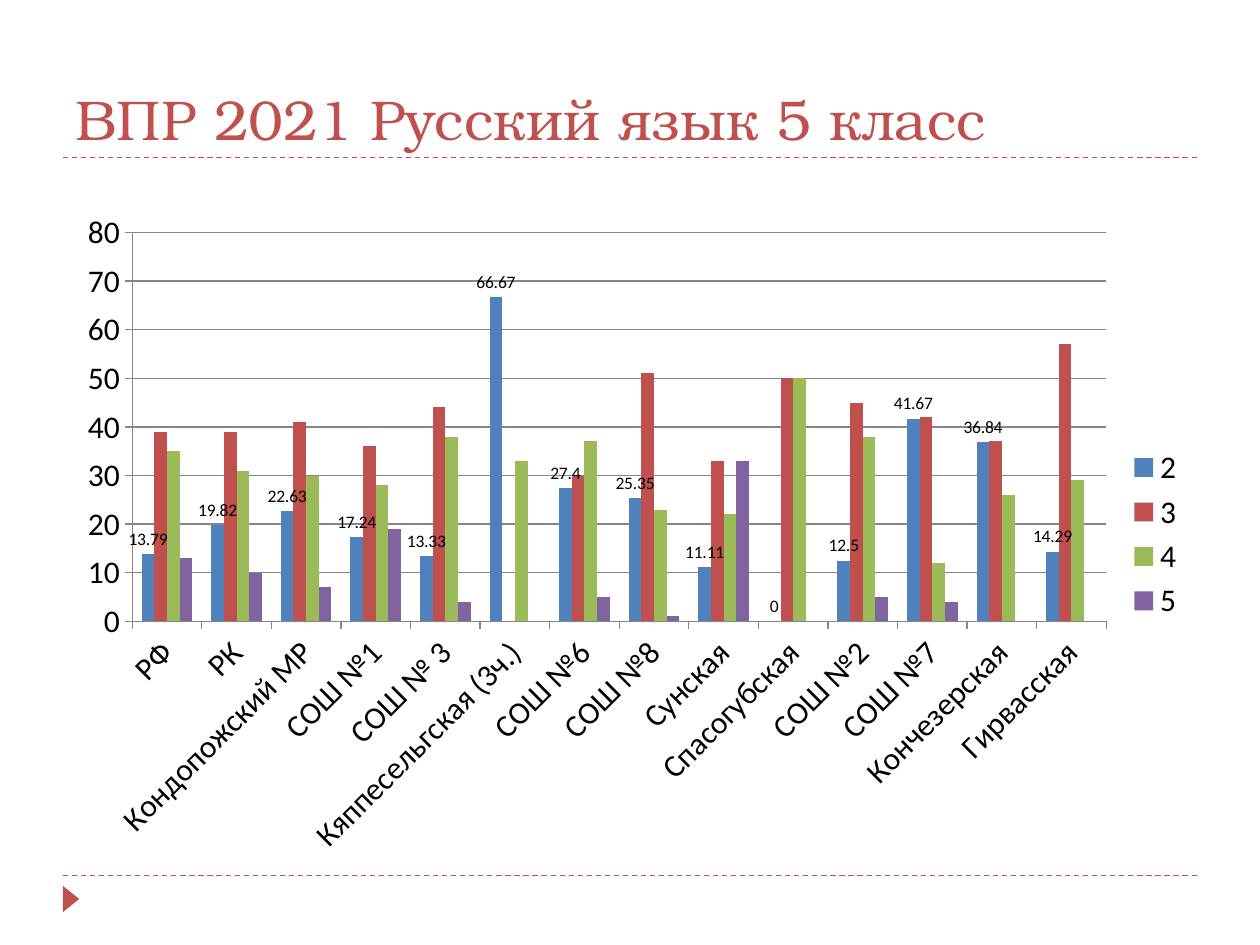
"""Build the slide with the Russian language test results for grade 5."""
from dataclasses import dataclass

from lxml import etree
from pptx import Presentation
from pptx import util as u
from pptx.chart.data import CategoryChartData
from pptx.dml.color import RGBColor
from pptx.enum import chart as ch, dml, shapes, text
from pptx.oxml.ns import qn

RED = "C0504D"
GREY = "868686"
SCHOOLS = ["РФ", "РК", "Кондопожский МР", "СОШ №1", "СОШ № 3", "Кяппесельгская (3ч.)", "СОШ №6",
           "СОШ №8", "Сунская", "Спасогубская", "СОШ №2", "СОШ №7", "Кончезерская", "Гирвасская"]


@dataclass
class Rule:
    y: float
    left: float = 36
    right: float = 684


@dataclass
class Mark:
    name: str
    color: str
    values: list[float]


RULES = [Rule(90), Rule(500.4)]
MARKS = [
    Mark("2", "4F81BD", [13.79, 19.82, 22.63, 17.24, 13.33, 66.67, 27.4,
                         25.35, 11.11, 0, 12.5, 41.67, 36.84, 14.29]),
    Mark("3", RED, [39, 39, 41, 36, 44, 0, 30, 51, 33, 50, 45, 42, 37, 57]),
    Mark("4", "9BBB59", [35, 31, 30, 28, 38, 33, 37, 23, 22, 50, 38, 12, 26, 29]),
    Mark("5", "8064A2", [13, 10, 7, 19, 4, 0, 5, 1, 33, 0, 5, 4, 0, 0]),
]


def rgb(value: str) -> RGBColor:
    return RGBColor.from_string(value)


def add_rule(s, rule: Rule) -> None:
    y = u.Pt(rule.y)
    sp = s.shapes.add_connector(shapes.MSO_CONNECTOR.STRAIGHT, u.Pt(rule.left), y, u.Pt(rule.right), y)
    sp.line.color.rgb = rgb(RED)
    sp.line.width = u.Pt(0.75)
    sp.line.dash_style = dml.MSO_LINE.DASH
    etree.SubElement(sp._element.spPr, qn("a:effectLst"))


def add_marker(s) -> None:
    sp = s.shapes.add_shape(shapes.MSO_SHAPE.ISOSCELES_TRIANGLE,
                            u.Pt(33.1), u.Pt(509), u.Pt(15), u.Pt(9.4))
    sp.rotation = 90
    sp.shadow.inherit = False
    sp.fill.solid()
    sp.fill.fore_color.rgb = rgb(RED)
    sp.line.fill.background()


def add_title(s, title: str) -> None:
    sp = s.shapes.add_textbox(u.Pt(36), u.Pt(12.24), u.Pt(648), u.Pt(77.76))
    tf = sp.text_frame
    tf.word_wrap = True
    tf.vertical_anchor = text.MSO_ANCHOR.BOTTOM
    tf.text = title
    f = tf.paragraphs[0].runs[0].font
    f.name, f.size, f.color.rgb = "TeX Gyre Bonum", u.Pt(32), rgb(RED)


def style_axes(chart) -> None:
    for axis in (chart.category_axis, chart.value_axis):
        axis.format.line.color.rgb = rgb(GREY)
        axis.format.line.width = u.Pt(0.75)
        axis.major_tick_mark = ch.XL_TICK_MARK.OUTSIDE
        axis.minor_tick_mark = ch.XL_TICK_MARK.NONE
        axis.tick_labels.font.size = u.Pt(18)
    labels = chart.category_axis._element.find(qn("c:txPr"))
    labels.find(qn("a:bodyPr")).set("rot", "-2700000")
    axis = chart.value_axis
    axis.minimum_scale, axis.maximum_scale, axis.major_unit = 0, 80, 10
    axis.has_major_gridlines = True
    axis.major_gridlines.format.line.color.rgb = rgb(GREY)
    axis.major_gridlines.format.line.width = u.Pt(0.75)


def place_plot(chart, x: float, y: float, w: float, h: float) -> None:
    area = chart._chartSpace.chart.plotArea
    for old in area.findall(qn("c:layout")):
        area.remove(old)
    layout = etree.Element(qn("c:layout"))
    area.insert(0, layout)
    manual = etree.SubElement(layout, qn("c:manualLayout"))
    settings = {"layoutTarget": "inner", "xMode": "edge", "yMode": "edge", "x": x, "y": y, "w": w, "h": h}
    for tag, value in settings.items():
        etree.SubElement(manual, qn(f"c:{tag}")).set("val", str(value))


def add_results(s, marks: list[Mark]) -> None:
    data = CategoryChartData()
    data.categories = SCHOOLS
    for mark in marks:
        data.add_series(mark.name, mark.values)
    chart = s.shapes.add_chart(ch.XL_CHART_TYPE.COLUMN_CLUSTERED, u.Pt(36.72), u.Pt(113.76),
                               u.Pt(647.28), u.Pt(383.04), data).chart
    chart.has_title = False
    chart.font.name, chart.font.size = "Calibri", u.Pt(18)
    chart.font.color.rgb = rgb("000000")
    chart.has_legend = True
    chart.legend.position = ch.XL_LEGEND_POSITION.RIGHT
    chart.legend.include_in_layout = False
    plot = chart.plots[0]
    plot.gap_width, plot.overlap, plot.vary_by_categories = 150, 0, False
    for series, mark in zip(plot.series, marks):
        series.format.fill.solid()
        series.format.fill.fore_color.rgb = rgb(mark.color)
    labels = plot.series[0].data_labels
    labels.show_value = True
    labels.position = ch.XL_LABEL_POSITION.OUTSIDE_END
    labels.font.size = u.Pt(10)
    style_axes(chart)
    place_plot(chart, 0.06, 0.05, 0.86, 0.58)


def main() -> None:
    prs = Presentation()
    prs.slide_width, prs.slide_height = u.Pt(720), u.Pt(540)
    s = prs.slides.add_slide(prs.slide_layouts[6])
    for rule in RULES:
        add_rule(s, rule)
    add_marker(s)
    add_title(s, "ВПР 2021 Русский язык 5 класс")
    add_results(s, MARKS)
    prs.save("out.pptx")


if __name__ == "__main__":
    main()
